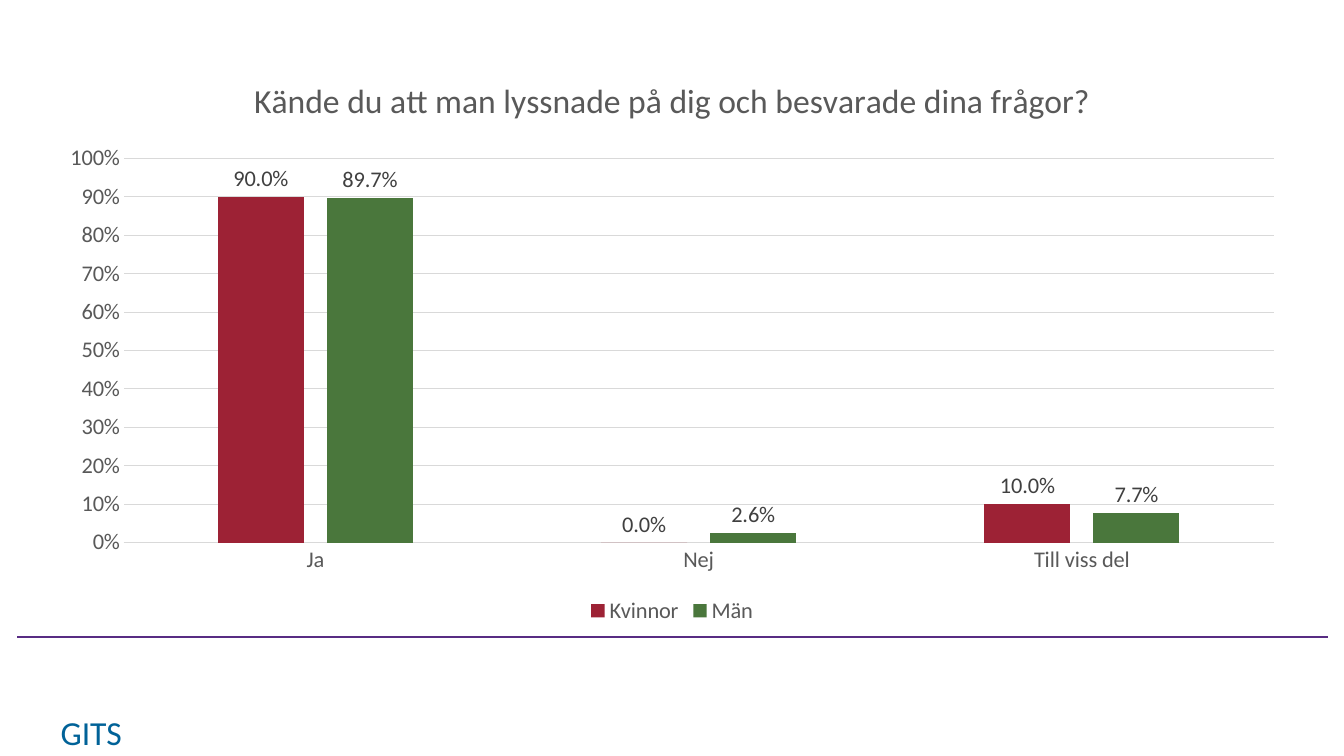
from lxml.etree import SubElement
from pptx import Presentation
from pptx.chart.data import CategoryChartData
from pptx.dml.color import RGBColor
from pptx.enum.chart import XL_CHART_TYPE, XL_LABEL_POSITION, XL_LEGEND_POSITION, XL_TICK_MARK
from pptx.enum.shapes import MSO_CONNECTOR
from pptx.enum.text import MSO_AUTO_SIZE, PP_ALIGN
from pptx.oxml.ns import qn
from pptx.util import Inches, Pt

COLORS = {
    "women": "9D2235",
    "men": "4A773C",
    "axis": "595959",
    "label": "404040",
    "grid": "D9D9D9",
    "rule": "582C83",
    "brand": "006298",
}


def rgb(name):
    return RGBColor.from_string(COLORS[name])


def set_font(font, size=16, color="axis", name="Calibri", bold=False):
    font.size = Pt(size)
    font.name = name
    font.bold = bold
    font.color.rgb = rgb(color)


def write(tf, text, align=PP_ALIGN.CENTER, **fmt):
    p = tf.paragraphs[0]
    p.alignment = align
    r = p.add_run()
    r.text = text
    set_font(r.font, **fmt)


class SlideBuilder:
    def __init__(self, prs):
        self.s = prs.slides.add_slide(prs.slide_layouts[6])

    def text(self, x, y, w, h, text, **fmt):
        sp = self.s.shapes.add_textbox(Inches(x), Inches(y), Inches(w), Inches(h))
        tf = sp.text_frame
        tf.word_wrap = True
        tf.auto_size = MSO_AUTO_SIZE.SHAPE_TO_FIT_TEXT
        write(tf, text, **fmt)

    def line(self, x1, y1, x2, y2, color, width=1):
        c = self.s.shapes.add_connector(
            MSO_CONNECTOR.STRAIGHT, Inches(x1), Inches(y1), Inches(x2), Inches(y2))
        c.line.color.rgb = rgb(color)
        c.line.width = Pt(width)
        SubElement(c.line._get_or_add_ln().getparent(), qn("a:effectLst"))

    def column_chart(self, x, y, w, h, title, categories, series):
        data = CategoryChartData(number_format="0.0%")
        data.categories = categories
        for name, values, _ in series:
            data.add_series(name, values)
        chart = self.s.shapes.add_chart(
            XL_CHART_TYPE.COLUMN_CLUSTERED, Inches(x), Inches(y), Inches(w), Inches(h), data).chart
        set_font(chart.font)
        chart.has_title = True
        write(chart.chart_title.text_frame, title, size=24)
        chart.chart_title.include_in_layout = False
        chart.has_legend = True
        chart.legend.position = XL_LEGEND_POSITION.BOTTOM
        chart.legend.include_in_layout = False
        set_font(chart.legend.font)
        self.axes(chart)

        plot = chart.plots[0]
        plot.gap_width = 219
        plot.overlap = -27
        plot.vary_by_categories = False
        for ser, (_, _, color) in zip(plot.series, series):
            ser.format.fill.solid()
            ser.format.fill.fore_color.rgb = rgb(color)
            ser.invert_if_negative = False
            labels = ser.data_labels
            labels.show_value = True
            labels.position = XL_LABEL_POSITION.OUTSIDE_END
            labels.number_format = "0.0%"
            labels.number_format_is_linked = False
            set_font(labels.font, color="label")

    def axes(self, chart):
        cat, val = chart.category_axis, chart.value_axis
        for axis in (cat, val):
            axis.major_tick_mark = XL_TICK_MARK.NONE
            axis.minor_tick_mark = XL_TICK_MARK.NONE
            set_font(axis.tick_labels.font)
        val.minimum_scale, val.maximum_scale, val.major_unit = 0, 1, 0.1
        val.has_major_gridlines = True
        val.tick_labels.number_format = "0%"
        val.tick_labels.number_format_is_linked = False
        val.format.line.fill.background()
        for line in (cat.format.line, val.major_gridlines.format.line):
            line.color.rgb = rgb("grid")
            line.width = Pt(0.75)


def main():
    prs = Presentation()
    prs.slide_width, prs.slide_height = Inches(13.33), Inches(7.5)
    slide = SlideBuilder(prs)
    slide.text(0.47, 7.01, 0.87, 0.5, "GITS", size=24, color="brand")
    slide.line(0.17, 6.32, 13.17, 6.32, "rule")
    slide.column_chart(
        0.45, 0.55, 12.43, 5.69,
        "Kände du att man lyssnade på dig och besvarade dina frågor?",
        ["Ja", "Nej", "Till viss del"],
        [("Kvinnor", (0.9, 0, 0.1), "women"), ("Män", (0.897, 0.026, 0.077), "men")])
    prs.save("out.pptx")


if __name__ == "__main__":
    main()
